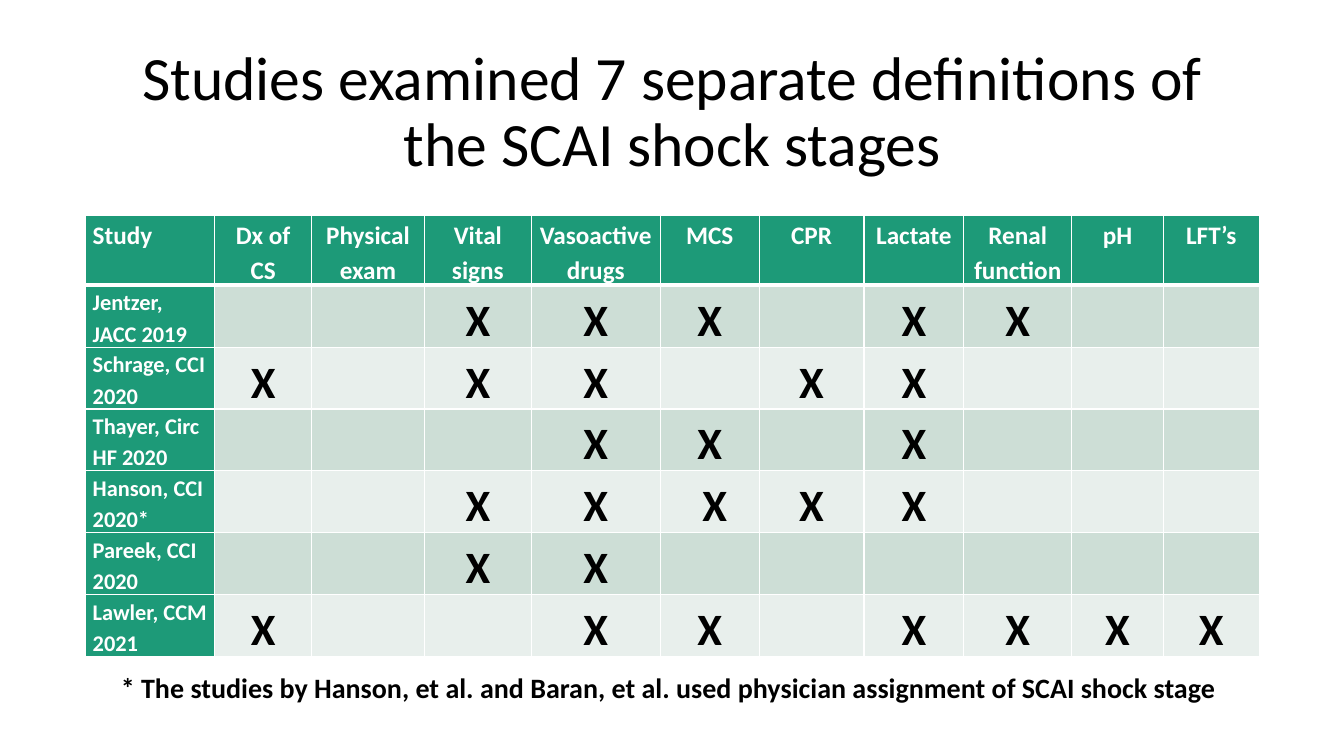
from dataclasses import dataclass

from lxml import etree
from pptx import Presentation
from pptx import util as u
from pptx.dml.color import RGBColor
from pptx.enum import text
from pptx.oxml import ns

WIDTH, HEIGHT = 13.33, 7.5
FONT = "Calibri"
COLOURS = {
    "ink": "000000",
    "white": "FFFFFF",
    "green": "1D9A78",
    "band_dark": "CDDED6",
    "band_light": "E8EFEC",
}
CENTRE, LEFT = text.PP_ALIGN.CENTER, text.PP_ALIGN.LEFT


@dataclass(frozen=True)
class Style:
    size: float
    colour: str
    bold: bool = True
    align: text.PP_ALIGN = CENTRE
    spacing: float = 1.15


@dataclass(frozen=True)
class Caption:
    """A text box; left, top, width and height are shares of the slide."""
    words: str
    left: float
    top: float
    width: float
    height: float
    anchor: text.MSO_ANCHOR
    style: Style


@dataclass(frozen=True)
class Criterion:
    heading: str
    width: float


@dataclass(frozen=True)
class Study:
    name: str
    criteria: tuple[str, ...]


CAPTIONS = [
    Caption("Studies examined 7 separate definitions of the SCAI shock stages",
            0.92 / WIDTH, 0.4 / HEIGHT, 11.5 / WIDTH, 1.45 / HEIGHT,
            text.MSO_ANCHOR.MIDDLE, Style(44, "ink", bold=False, spacing=0.9)),
    Caption("* The studies by Hanson, et al. and Baran, et al. used physician "
            "assignment of SCAI shock stage",
            0.92 / WIDTH, 6.6 / HEIGHT, 11.42 / WIDTH, 0.44 / HEIGHT,
            text.MSO_ANCHOR.TOP, Style(20, "ink", spacing=1.0)),
]

COLUMNS = [
    Criterion("Study", 1.28),
    Criterion("Dx of CS", 0.96),
    Criterion("Physical exam", 1.12),
    Criterion("Vital signs", 1.06),
    Criterion("Vasoactive drugs", 1.28),
    Criterion("MCS", 0.98),
    Criterion("CPR", 1.04),
    Criterion("Lactate", 0.99),
    Criterion("Renal function", 1.07),
    Criterion("pH", 0.91),
    Criterion("LFT’s", 0.95),
]

STUDIES = [
    Study("Jentzer, JACC 2019", ("Vital signs", "Vasoactive drugs", "MCS",
                                 "Lactate", "Renal function")),
    Study("Schrage, CCI 2020", ("Dx of CS", "Vital signs", "Vasoactive drugs",
                                "CPR", "Lactate")),
    Study("Thayer, Circ HF 2020", ("Vasoactive drugs", "MCS", "Lactate")),
    Study("Hanson, CCI 2020*", ("Vital signs", "Vasoactive drugs", "MCS",
                                "CPR", "Lactate")),
    Study("Pareek, CCI 2020", ("Vital signs", "Vasoactive drugs")),
    Study("Lawler, CCM 2021", ("Dx of CS", "Vasoactive drugs", "MCS", "Lactate",
                               "Renal function", "pH", "LFT’s")),
]
# This mark is set off by a no-break space
SHIFTED_MARKS = {("Hanson, CCI 2020*", "MCS"): " X"}

TABLE_LEFT, TABLE_TOP, TABLE_HEIGHT = 0.85, 2.14, 4.24
HEADING = Style(18, "white")
CORNER = Style(18, "white", align=LEFT)
STUDY_NAME = Style(16, "white", align=LEFT)
MARK = Style(32, "ink")


def colour(name: str) -> RGBColor:
    return RGBColor.from_string(COLOURS[name])


def write(frame, words: str, style: Style) -> None:
    para = frame.paragraphs[0]
    para.alignment = style.align
    para.line_spacing = style.spacing
    span = para.add_run()
    span.text = words
    span.font.name = FONT
    span.font.size = u.Pt(style.size)
    span.font.bold = style.bold
    span.font.color.rgb = colour(style.colour)


def add_caption(page, caption: Caption) -> None:
    box = page.shapes.add_textbox(
        u.Inches(caption.left * WIDTH), u.Inches(caption.top * HEIGHT),
        u.Inches(caption.width * WIDTH), u.Inches(caption.height * HEIGHT))
    box.text_frame.word_wrap = True
    box.text_frame.vertical_anchor = caption.anchor
    write(box.text_frame, caption.words, caption.style)


def add_borders(cell, top: float, bottom: float) -> None:
    properties = cell._tc.get_or_add_tcPr()
    for side, points in (("L", 1), ("R", 1), ("T", top), ("B", bottom)):
        line = etree.SubElement(properties, ns.qn(f"a:ln{side}"), w=str(u.Pt(points)))
        fill = etree.SubElement(line, ns.qn("a:solidFill"))
        etree.SubElement(fill, ns.qn("a:srgbClr"), val=COLOURS["white"])


def fill_cell(cell, row: int, fill: str, words: str, style: Style) -> None:
    add_borders(cell, top=3 if row == 1 else 1, bottom=3 if row == 0 else 1)
    cell.fill.solid()
    cell.fill.fore_color.rgb = colour(fill)
    if words:
        cell.margin_left = cell.margin_right = u.Inches(0.07)
        cell.margin_top = cell.margin_bottom = 0
        write(cell.text_frame, words, style)


def add_study_table(page) -> None:
    row_count = len(STUDIES) + 1
    table = page.shapes.add_table(
        row_count, len(COLUMNS), u.Inches(TABLE_LEFT), u.Inches(TABLE_TOP),
        u.Inches(sum(column.width for column in COLUMNS)),
        u.Inches(TABLE_HEIGHT)).table

    # Heading row
    for index, column in enumerate(COLUMNS):
        table.columns[index].width = u.Inches(column.width)
        fill_cell(table.cell(0, index), 0, "green", column.heading,
                  HEADING if index else CORNER)

    # One banded row for each study
    for row, study in enumerate(STUDIES, start=1):
        fill_cell(table.cell(row, 0), row, "green", study.name, STUDY_NAME)
        band = "band_dark" if row % 2 else "band_light"
        for index, column in enumerate(COLUMNS[1:], start=1):
            mark = ""
            if column.heading in study.criteria:
                mark = SHIFTED_MARKS.get((study.name, column.heading), "X")
            fill_cell(table.cell(row, index), row, band, mark, MARK)


def main() -> None:
    deck = Presentation()
    deck.slide_width, deck.slide_height = u.Inches(WIDTH), u.Inches(HEIGHT)
    page = deck.slides.add_slide(deck.slide_layouts[6])

    # Title and footnote around the table
    title, footnote = CAPTIONS
    add_caption(page, title)
    add_study_table(page)
    add_caption(page, footnote)
    deck.save("out.pptx")


if __name__ == "__main__":
    main()
